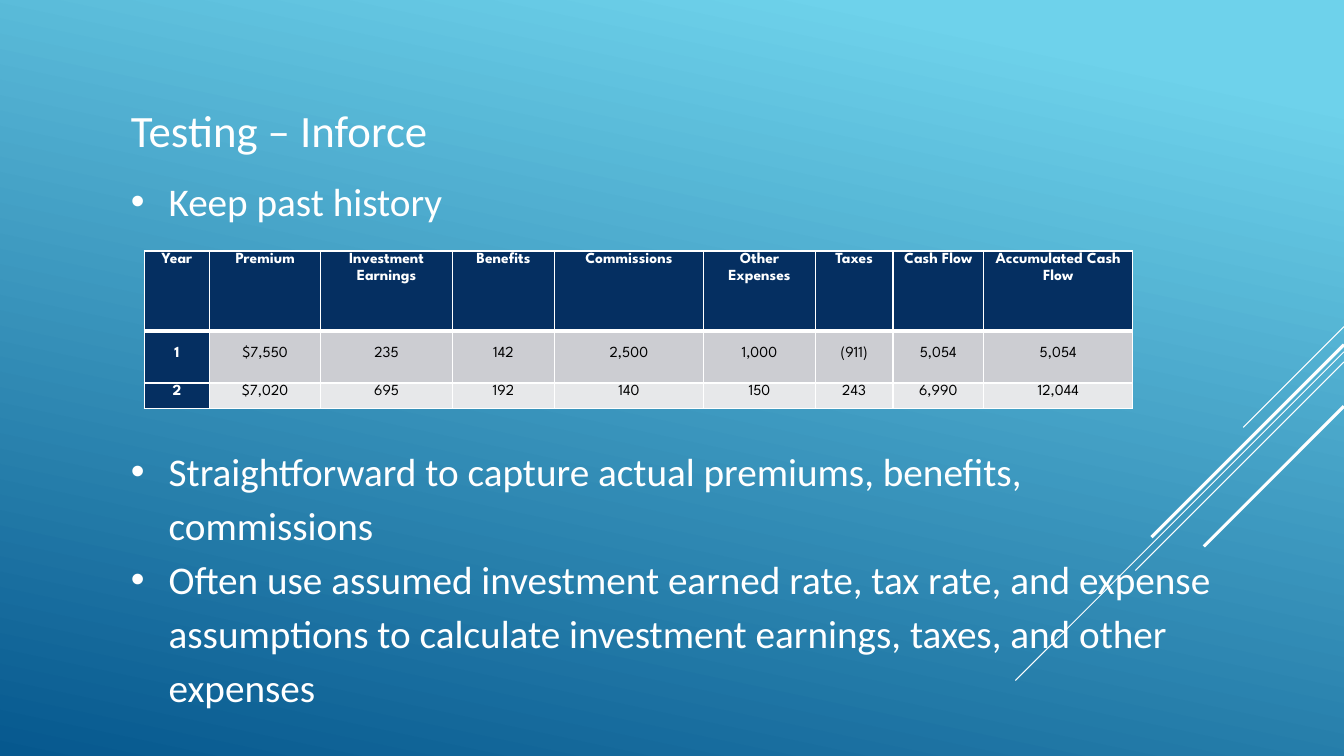
from lxml import etree
from pptx import Presentation
from pptx.dml.color import RGBColor
from pptx.enum import shapes, text
from pptx.oxml import ns
from pptx.util import Pt

WHITE = RGBColor(0xFF, 0xFF, 0xFF)
BLACK = RGBColor(0, 0, 0)
NAVY = RGBColor(0x05, 0x2F, 0x61)
GREY = RGBColor(0xCC, 0xCD, 0xD2)
PALE = RGBColor(0xE7, 0xE8, 0xEA)
SKY = RGBColor(0x6E, 0xD2, 0xEB)
OCEAN = RGBColor(0x06, 0x58, 0x8E)

SLIDE_W, SLIDE_H = 960, 540

# Start height on the right edge, horizontal run, line width
RAYS = [(233.3, 72, 0.75), (251.3, 234.7, 0.75), (258.5, 149, 0.75),
        (246.2, 137.5, 2.25), (290.2, 100.1, 2.25)]

# Text, space before
BULLETS = [
    ("Keep past history", 0),
    ("Straightforward to capture actual premiums, benefits, commissions", 154),
    ("Often use assumed investment earned rate, tax rate, and expense assumptions "
     "to calculate investment earnings, taxes, and other expenses", 0),
]

COL_WIDTHS = [46.8, 79.2, 94.3, 72.7, 106.6, 79.9, 55.4, 64.8, 106.6]
ROW_HEIGHTS = [56.9, 37.4, 18]
ROW_FILLS = [NAVY, GREY, PALE]
ROW_TOP_MARGINS = [0, 10, 0]
CASH_FLOWS = [
    ["Year", "Premium", "Investment Earnings", "Benefits", "Commissions",
     "Other Expenses", "Taxes", "Cash Flow", "Accumulated Cash Flow"],
    ["1", "$7,550", "235", "142", "2,500", "1,000", "(911)", "5,054", "5,054"],
    ["2", "$7,020", "695", "192", "140", "150", "243", "6,990", "12,044"],
]


def set_background(s):
    fill = s.background.fill
    fill.gradient()
    fill.gradient_angle = 258
    for stop, position, color in zip(fill.gradient_stops, (0.1, 1), (SKY, OCEAN)):
        stop.position = position
        stop.color.rgb = color


def add_ray(s, top, run, width):
    """Draw a 45-degree line down and left from the right edge."""
    line = s.shapes.add_connector(
        shapes.MSO_CONNECTOR.STRAIGHT, Pt(SLIDE_W), Pt(top),
        Pt(SLIDE_W - run), Pt(top + run))
    line.line.color.rgb = WHITE
    line.line.width = Pt(width)
    etree.SubElement(line._element.spPr, ns.qn("a:effectLst"))


def format_paragraph(p, font, size, color, bold=False):
    p.line_spacing = 1.15
    for r in p.runs:
        r.font.name = font
        r.font.size = Pt(size)
        r.font.bold = bold
        r.font.color.rgb = color


def add_bullet(p):
    pPr = p._p.get_or_add_pPr()
    pPr.set("marL", str(Pt(27)))
    pPr.set("indent", str(Pt(-27)))
    etree.SubElement(pPr, ns.qn("a:buFont"), typeface="Arial")
    etree.SubElement(pPr, ns.qn("a:buChar"), char="•")


def add_body(s):
    tf = s.shapes.add_textbox(Pt(86.4), Pt(64.1), Pt(787.7), Pt(532.8)).text_frame
    tf.word_wrap = True
    tf.auto_size = text.MSO_AUTO_SIZE.SHAPE_TO_FIT_TEXT
    title = tf.paragraphs[0]
    title.text = "Testing – Inforce"
    title.space_after = Pt(10)
    format_paragraph(title, "Calibri", 32, WHITE)
    for bullet, gap in BULLETS:
        p = tf.add_paragraph()
        p.text = bullet
        p.space_before = Pt(gap)
        format_paragraph(p, "Calibri", 28, WHITE)
        add_bullet(p)


def set_borders(cell, top, bottom):
    tcPr = cell._tc.get_or_add_tcPr()
    for side, width in (("L", 1), ("R", 1), ("T", top), ("B", bottom)):
        ln = etree.SubElement(tcPr, ns.qn(f"a:ln{side}"), w=str(Pt(width)))
        fill = etree.SubElement(ln, ns.qn("a:solidFill"))
        etree.SubElement(fill, ns.qn("a:srgbClr"), val=str(WHITE))


def fill_cell(cell, label, row, is_heading):
    set_borders(cell, 3 if row == 1 else 1, 3 if row == 0 else 1)
    cell.fill.solid()
    cell.fill.fore_color.rgb = NAVY if is_heading else ROW_FILLS[row]
    cell.margin_left = cell.margin_right = Pt(5)
    cell.margin_top, cell.margin_bottom = Pt(ROW_TOP_MARGINS[row]), 0
    p = cell.text_frame.paragraphs[0]
    p.text = label
    p.alignment = text.PP_ALIGN.CENTER
    format_paragraph(p, "League Spartan", 11, WHITE if is_heading else BLACK, is_heading)


def add_cash_flow_table(s):
    table = s.shapes.add_table(
        len(ROW_HEIGHTS), len(COL_WIDTHS), Pt(103), Pt(179.3),
        Pt(sum(COL_WIDTHS)), Pt(sum(ROW_HEIGHTS))).table
    table.horz_banding = False
    for column, width in zip(table.columns, COL_WIDTHS):
        column.width = Pt(width)
    for i, labels in enumerate(CASH_FLOWS):
        table.rows[i].height = Pt(ROW_HEIGHTS[i])
        for j, label in enumerate(labels):
            fill_cell(table.cell(i, j), label, i, i == 0 or j == 0)


def main():
    prs = Presentation()
    prs.slide_width, prs.slide_height = Pt(SLIDE_W), Pt(SLIDE_H)
    s = prs.slides.add_slide(prs.slide_layouts[6])
    set_background(s)
    for ray in RAYS:
        add_ray(s, *ray)
    add_body(s)
    add_cash_flow_table(s)
    prs.save("out.pptx")


if __name__ == "__main__":
    main()
